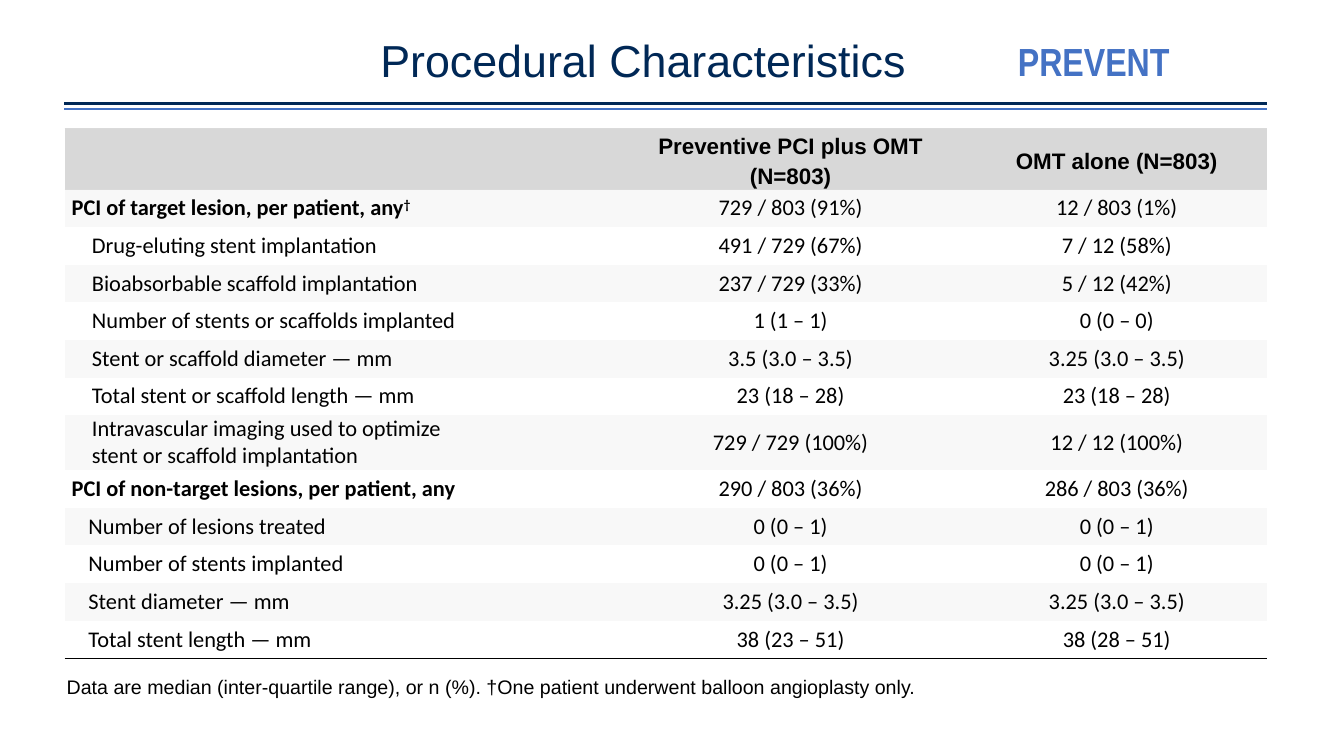
from dataclasses import dataclass

from lxml.etree import SubElement
from pptx import Presentation
from pptx.dml.color import RGBColor
from pptx.enum.shapes import MSO_CONNECTOR
from pptx.enum.text import MSO_ANCHOR, PP_ALIGN
from pptx.oxml import parse_xml
from pptx.oxml.ns import nsdecls, qn
from pptx.util import Pt


@dataclass(frozen=True)
class Theme:
    navy: str = "002856"
    blue: str = "4472C4"
    black: str = "000000"
    header: str = "D8D8D8"
    border: str = "DADADA"
    band: str = "F8F8F8"
    heading: str = "Arial"
    label: str = "Arial Narrow"
    body: str = "Calibri"
    title_size: int = 32
    label_size: int = 28
    table_size: int = 16
    note_size: int = 14


class SlideBuilder:
    NO_STYLE = "{2D5ABB26-0587-4C30-8999-92F81FD0307C}"

    def __init__(self, page, theme):
        self.page = page
        self.theme = theme

    def style(self, paragraph, font, size, color, bold=False, align=PP_ALIGN.LEFT):
        paragraph.alignment = align
        paragraph.font.name = font
        paragraph.font.size = Pt(size)
        paragraph.font.bold = bold
        paragraph.font.color.rgb = RGBColor.from_string(color)

    def text(self, words, left, top, width, height, font, size, color,
             bold=False, align=PP_ALIGN.LEFT, anchor=MSO_ANCHOR.TOP, spacing=1.0):
        box = self.page.shapes.add_textbox(Pt(left), Pt(top), Pt(width), Pt(height))
        frame = box.text_frame
        frame.word_wrap = True
        frame.vertical_anchor = anchor
        para = frame.paragraphs[0]
        para.text = words
        para.line_spacing = spacing
        self.style(para, font, size, color, bold, align)

    def rule(self, left, right, y, color, weight):
        line = self.page.shapes.add_connector(
            MSO_CONNECTOR.STRAIGHT, Pt(left), Pt(y), Pt(right), Pt(y))
        line.line.color.rgb = RGBColor.from_string(color)
        line.line.width = Pt(weight)
        SubElement(line._element.spPr, qn("a:effectLst"))

    def table(self, left, top, widths, heights):
        frame = self.page.shapes.add_table(
            len(heights), len(widths), Pt(left), Pt(top), Pt(sum(widths)), Pt(sum(heights)))
        table = frame.table
        table.first_row = table.horz_banding = False
        next(frame._element.iter(qn("a:tableStyleId"))).text = self.NO_STYLE
        for column, width in zip(table.columns, widths):
            column.width = Pt(width)
        for row, height in zip(table.rows, heights):
            row.height = Pt(height)
        return table

    def cell(self, cell, words, font, margin, fill=None, bold=False,
             align=PP_ALIGN.CENTER, indent=0, spacing=1.0, mark="", borders=None):
        cell.margin_left = cell.margin_right = Pt(margin)
        cell.margin_top = cell.margin_bottom = 0
        cell.vertical_anchor = MSO_ANCHOR.MIDDLE
        if fill:
            cell.fill.solid()
            cell.fill.fore_color.rgb = RGBColor.from_string(fill)
        else:
            cell.fill.background()
        cell.text = words
        for para in cell.text_frame.paragraphs:
            para.line_spacing = spacing
            self.style(para, font, self.theme.table_size, self.theme.black, bold, align)
            if indent:
                para._p.get_or_add_pPr().set("marL", str(Pt(indent)))
        if mark:
            span = cell.text_frame.paragraphs[-1].add_run()
            span.text = mark
            span.font._element.set("baseline", "30000")
        for position, (side, color) in enumerate((borders or {}).items()):
            cell._tc.get_or_add_tcPr().insert(position, parse_xml(
                f'<a:{side} {nsdecls("a")} w="{Pt(1)}"><a:solidFill>'
                f'<a:srgbClr val="{color}"/></a:solidFill></a:{side}>'))


HEADERS = ["", "Preventive PCI plus OMT (N=803)", "OMT alone (N=803)"]
TARGET, OTHER = 14.5, 12
ROWS = [
    ("PCI of target lesion, per patient, any", "729 / 803 (91%)", "12 / 803 (1%)", 0),
    ("Drug-eluting stent implantation", "491 / 729 (67%)", "7 / 12 (58%)", TARGET),
    ("Bioabsorbable scaffold implantation", "237 / 729 (33%)", "5 / 12 (42%)", TARGET),
    ("Number of stents or scaffolds implanted", "1 (1 – 1)", "0 (0 – 0)", TARGET),
    ("Stent or scaffold diameter — mm", "3.5 (3.0 – 3.5)", "3.25 (3.0 – 3.5)", TARGET),
    ("Total stent or scaffold length — mm", "23 (18 – 28)", "23 (18 – 28)", TARGET),
    ("Intravascular imaging used to optimize\nstent or scaffold implantation",
     "729 / 729 (100%)", "12 / 12 (100%)", TARGET),
    ("PCI of non-target lesions, per patient, any", "290 / 803 (36%)", "286 / 803 (36%)", 0),
    ("Number of lesions treated", "0 (0 – 1)", "0 (0 – 1)", OTHER),
    ("Number of stents implanted", "0 (0 – 1)", "0 (0 – 1)", OTHER),
    ("Stent diameter — mm", "3.25 (3.0 – 3.5)", "3.25 (3.0 – 3.5)", OTHER),
    ("Total stent length — mm", "38 (23 – 51)", "38 (28 – 51)", OTHER),
]


def add_procedures(builder):
    theme = builder.theme
    heights = [43.5] + [39.3 if "\n" in row[0] else 26.9 for row in ROWS]
    table = builder.table(46.2, 91.8, [393, 251, 215], heights)
    edges = {"lnT": theme.border, "lnB": theme.border}
    for column, words in enumerate(HEADERS):
        builder.cell(table.cell(0, column), words, theme.heading, 7.2, theme.header,
                     bold=True, spacing=1.2, borders=edges)
    for number, (label, preventive, alone, indent) in enumerate(ROWS, 1):
        fill = theme.band if number % 2 else None
        borders = {"lnB": theme.black} if number == len(ROWS) else None
        builder.cell(table.cell(number, 0), label, theme.body, 5, fill, bold=not indent,
                     align=PP_ALIGN.JUSTIFY, indent=indent,
                     mark="†" if number == 1 else "", borders=borders)
        for column, value in enumerate((preventive, alone), 1):
            builder.cell(table.cell(number, column), value, theme.body, 5, fill,
                         borders=borders)


def main():
    deck = Presentation()
    deck.slide_width, deck.slide_height = Pt(960), Pt(540)
    theme = Theme()
    builder = SlideBuilder(deck.slides.add_slide(deck.slide_layouts[6]), theme)
    add_procedures(builder)
    builder.text("Data are median (inter-quartile range), or n (%). "
                 "†One patient underwent balloon angioplasty only.",
                 40.5, 478, 711, 24.5, theme.heading, theme.note_size, theme.black,
                 anchor=MSO_ANCHOR.MIDDLE)
    builder.text("Procedural Characteristics", 45.5, 24.5, 828, 57, theme.heading,
                 theme.title_size, theme.navy, align=PP_ALIGN.CENTER, spacing=0.9)
    builder.text("PREVENT", 720, 23, 185, 41, theme.label, theme.label_size,
                 theme.blue, bold=True)
    builder.rule(46, 905, 74, theme.navy, 2.25)
    builder.rule(46, 905, 78, theme.blue, 1)
    deck.save("out.pptx")


if __name__ == "__main__":
    main()
